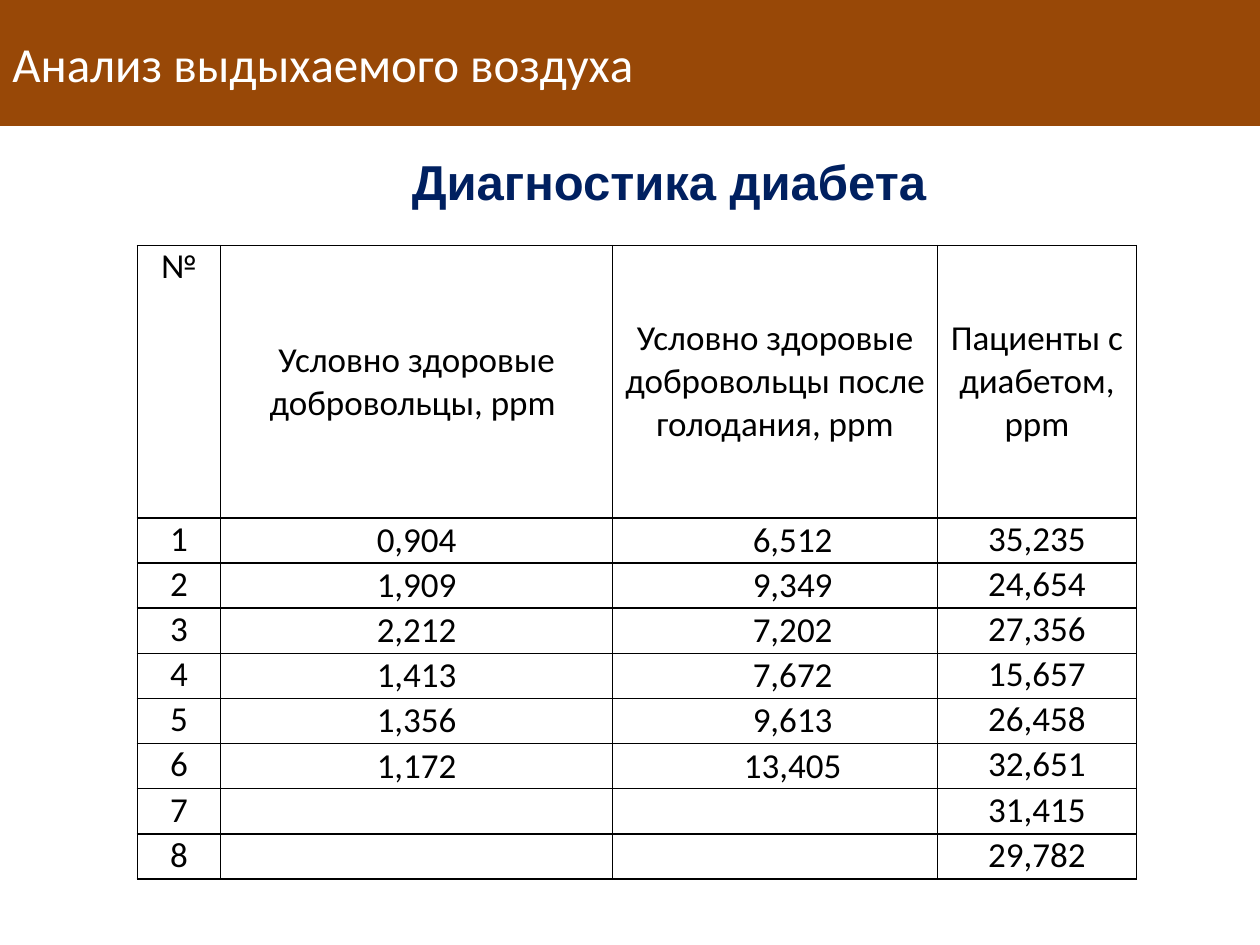
"""Builds the slide on diagnosing diabetes from exhaled air."""
from dataclasses import dataclass
from typing import Any

from lxml import etree
from pptx import Presentation
from pptx import util as u
from pptx.dml.color import RGBColor
from pptx.enum import shapes, text
from pptx.oxml import ns

BROWN = RGBColor(0x98, 0x48, 0x07)
NAVY = RGBColor(0x00, 0x20, 0x60)
BLACK = RGBColor(0, 0, 0)
WHITE = RGBColor(255, 255, 255)

HEADINGS = (
    "№",
    "Условно здоровые добровольцы, ppm ",
    "Условно здоровые добровольцы после голодания, ppm",
    "Пациенты с диабетом, ppm",
)
HEALTHY = ("0,904", "1,909", "2,212", "1,413", "1,356", "1,172", "", "")
FASTING = ("6,512", "9,349", "7,202", "7,672", "9,613", "13,405", "", "")
PATIENTS = ("35,235", "24,654", "27,356", "15,657", "26,458", "32,651", "31,415", "29,782")
COLUMN_WIDTHS = (1.68, 7.9, 6.55, 4.01)
HEADING_HEIGHT, READING_HEIGHT = 5.49, 0.91


def write(frame, wording, *, size, color, font="Calibri", bold=False,
          align=text.PP_ALIGN.CENTER, anchor=text.MSO_ANCHOR.TOP, indent=0):
    frame.word_wrap = True
    frame.vertical_anchor = anchor
    line = frame.paragraphs[0]
    line.alignment = align
    if indent:
        line._p.get_or_add_pPr().set("indent", str(u.Cm(indent)))
    if wording:
        run = line.add_run()
        run.text = wording
        run.font.size = u.Pt(size)
        run.font.name = font
        run.font.bold = bold
        run.font.color.rgb = color


@dataclass
class Page:
    slide: Any
    title_size: int = 28
    table_size: int = 20
    border: float = 1

    def banner(self, wording, left, top, width, height):
        band = self.slide.shapes.add_shape(
            shapes.MSO_SHAPE.RECTANGLE, *map(u.Cm, (left, top, width, height)))
        band.shadow.inherit = False
        band.fill.solid()
        band.fill.fore_color.rgb = BROWN
        band.line.fill.background()
        write(band.text_frame, wording, size=self.title_size, color=WHITE,
              align=text.PP_ALIGN.LEFT, anchor=text.MSO_ANCHOR.MIDDLE)

    def heading(self, wording, left, top, width, height):
        topic = self.slide.shapes.add_textbox(*map(u.Cm, (left, top, width, height)))
        write(topic.text_frame, wording, size=self.title_size, color=NAVY,
              font="Arial", bold=True)

    def outline(self, cell):
        properties = cell._tc.get_or_add_tcPr()
        for position, side in enumerate(("a:lnL", "a:lnR", "a:lnT", "a:lnB")):
            edge = etree.Element(ns.qn(side), w=str(u.Pt(self.border)))
            paint = etree.SubElement(edge, ns.qn("a:solidFill"))
            etree.SubElement(paint, ns.qn("a:srgbClr"), val=str(BLACK))
            properties.insert(position, edge)

    def table(self, rows, left, top, widths, heights):
        area = map(u.Cm, (left, top, sum(widths), sum(heights)))
        readings = self.slide.shapes.add_table(len(rows), len(widths), *area).table
        readings.first_row = readings.horz_banding = False
        for column, width in zip(readings.columns, widths):
            column.width = u.Cm(width)
        for r, (row, height) in enumerate(zip(rows, heights)):
            readings.rows[r].height = u.Cm(height)
            for c, wording in enumerate(row):
                cell = readings.cell(r, c)
                cell.fill.background()
                cell.margin_left = cell.margin_right = u.Cm(0.18)
                cell.margin_top = cell.margin_bottom = 0
                self.outline(cell)
                centred = c in (1, 2) or (r == 0 and c == 3)
                write(cell.text_frame, wording, size=self.table_size, color=BLACK,
                      indent=0.71 if r and c == 2 else 0)
                cell.vertical_anchor = (
                    text.MSO_ANCHOR.MIDDLE if centred else text.MSO_ANCHOR.TOP)


def main():
    deck = Presentation()
    deck.slide_width, deck.slide_height = u.Cm(25.4), u.Cm(19.05)
    page = Page(deck.slides.add_slide(deck.slide_layouts[6]))
    numbers = map(str, range(1, len(PATIENTS) + 1))
    rows = [HEADINGS, *zip(numbers, HEALTHY, FASTING, PATIENTS)]
    heights = [HEADING_HEIGHT] + [READING_HEIGHT] * len(PATIENTS)
    page.heading("Диагностика диабета", 2.97, 2.92, 21.03, 1.45)
    page.table(rows, 2.77, 4.95, COLUMN_WIDTHS, heights)
    page.banner("Анализ выдыхаемого воздуха", 0, 0, 25.4, 2.54)
    deck.save("out.pptx")


if __name__ == "__main__":
    main()
